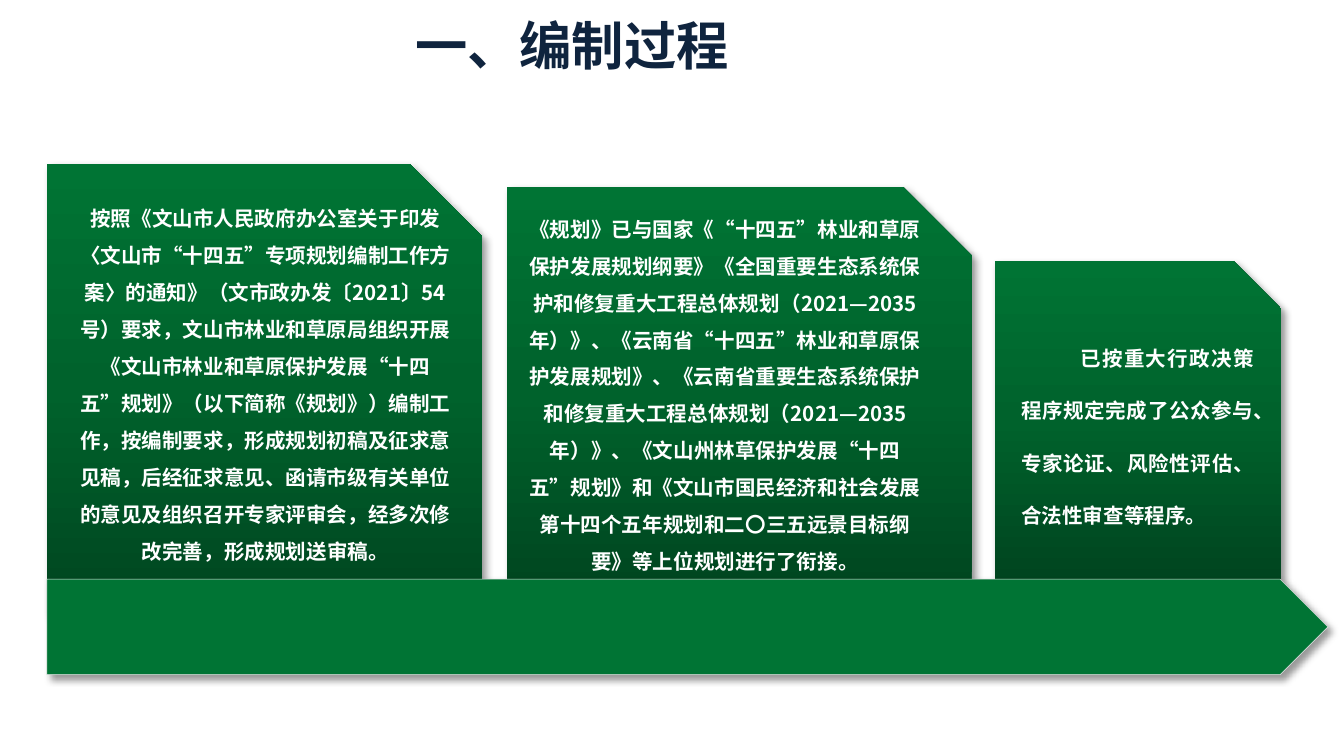
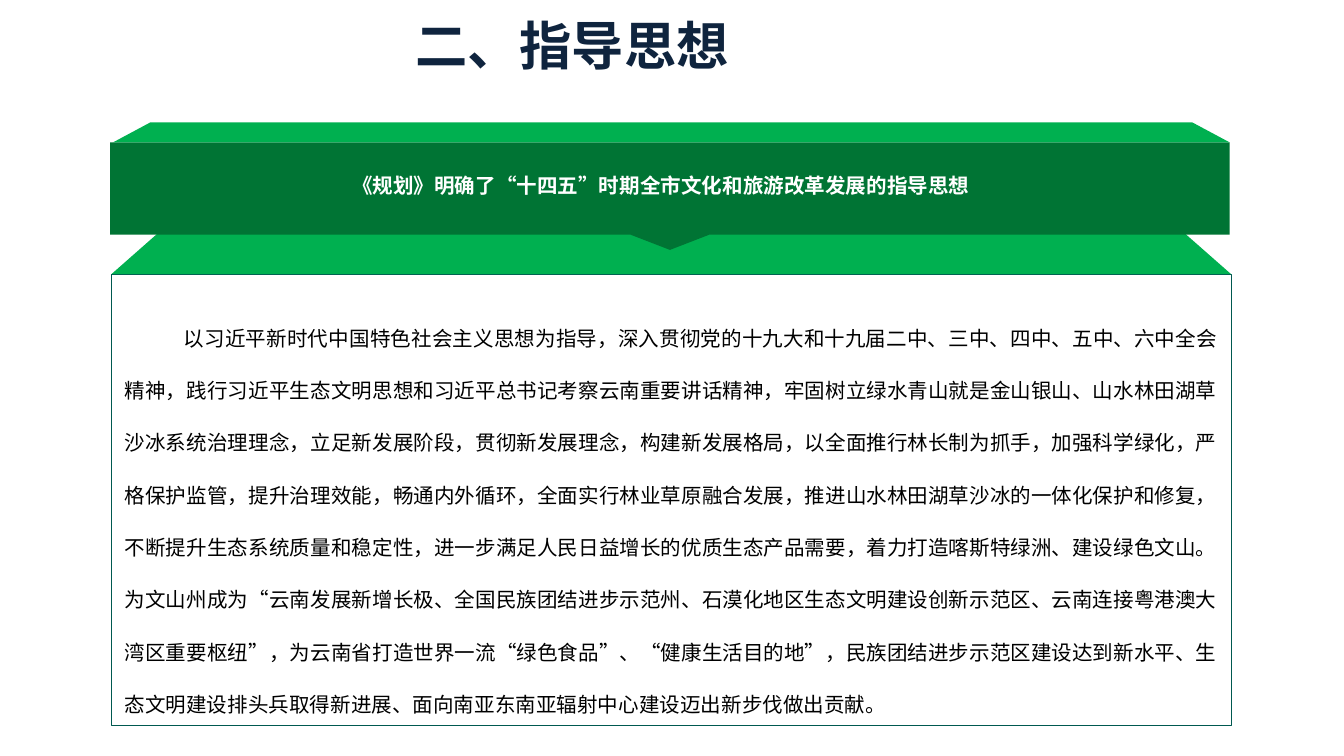
from copy import deepcopy

from lxml import etree
from pptx import Presentation
from pptx.dml.color import RGBColor
from pptx.enum.shapes import MSO_SHAPE
from pptx.enum.text import MSO_ANCHOR, MSO_AUTO_SIZE, PP_ALIGN
from pptx.oxml.ns import qn
from pptx.util import Inches, Pt

SNIP = MSO_SHAPE.SNIP_1_RECTANGLE
ARROW = MSO_SHAPE.PENTAGON
BANNER = MSO_SHAPE.DOWN_ARROW_CALLOUT
RECT = MSO_SHAPE.RECTANGLE
TOP, MIDDLE = MSO_ANCHOR.TOP, MSO_ANCHOR.MIDDLE
LEFT, CENTER, JUSTIFY = PP_ALIGN.LEFT, PP_ALIGN.CENTER, PP_ALIGN.JUSTIFY
GROW, FIXED = MSO_AUTO_SIZE.SHAPE_TO_FIT_TEXT, MSO_AUTO_SIZE.NONE

WIDTH = Inches(10)
HEIGHT = WIDTH * 9 // 16

SANS = "Noto Sans CJK SC"
SERIF = "Times New Roman"

WHITE = RGBColor(0xFF, 0xFF, 0xFF)
BLACK = RGBColor(0, 0, 0)
NAVY = RGBColor(0x0F, 0x24, 0x3E)
GREEN = RGBColor(0x00, 0x74, 0x34)
BRIGHT = RGBColor(0x00, 0xB0, 0x50)
TEAL = RGBColor(0x00, 0x59, 0x50)
PALE = RGBColor(0xEA, 0xEA, 0xEA)
FADE = [(0, RGBColor(0x00, 0x45, 0x1F)),
        (0.5, RGBColor(0x00, 0x62, 0x2C)),
        (1, GREEN)]

# Card left, top, width, height; text left, top, width, height; style; words
CARDS = [
    ((0.35, 1.22, 3.24, 3.34), (0.47, 1.39, 3.01, 2.85),
     dict(align=CENTER, space=1.5),
     "按照《文山市人民政府办公室关于印发〈文山市“十四五”专项规划编制工作方案〉的通知》"
     "（文市政办发〔2021〕54号）要求，文山市林业和草原局组织开展《文山市林业和草原保护发展"
     "“十四五”规划》（以下简称《规划》）编制工作，按编制要求，形成规划初稿及征求意见稿，"
     "后经征求意见、函请市级有关单位的意见及组织召开专家评审会，经多次修改完善，形成规划送审稿。"),
    ((3.77, 1.39, 3.46, 3.07), (3.82, 1.47, 3.15, 2.92),
     dict(align=CENTER, space=1.5),
     "《规划》已与国家《“十四五”林业和草原保护发展规划纲要》《全国重要生态系统保护和修复"
     "重大工程总体规划（2021—2035年）》、《云南省“十四五”林业和草原保护发展规划》、"
     "《云南省重要生态系统保护和修复重大工程总体规划（2021—2035年）》、《文山州林草保护发展"
     "“十四五”规划》和《文山市国民经济和社会发展第十四个五年规划和二〇三五远景目标纲要》"
     "等上位规划进行了衔接。"),
    ((7.4, 1.94, 2.13, 2.37), (7.5, 2.32, 1.93, 1.61),
     dict(align=JUSTIFY, space=Pt(28), indent=0.44),
     "已按重大行政决策程序规定完成了公众参与、专家论证、风险性评估、合法性审查等程序。"),
]

GUIDE = (
    "以习近平新时代中国特色社会主义思想为指导，深入贯彻党的十九大和十九届二中、三中、四中、"
    "五中、六中全会精神，践行习近平生态文明思想和习近平总书记考察云南重要讲话精神，牢固树立"
    "绿水青山就是金山银山、山水林田湖草沙冰系统治理理念，立足新发展阶段，贯彻新发展理念，"
    "构建新发展格局，以全面推行林长制为抓手，加强科学绿化，严格保护监管，提升治理效能，"
    "畅通内外循环，全面实行林业草原融合发展，推进山水林田湖草沙冰的一体化保护和修复，"
    "不断提升生态系统质量和稳定性，进一步满足人民日益增长的优质生态产品需要，着力打造"
    "喀斯特绿洲、建设绿色文山。为文山州成为“云南发展新增长极、全国民族团结进步示范州、"
    "石漠化地区生态文明建设创新示范区、云南连接粤港澳大湾区重要枢纽”，为云南省打造世界一流"
    "“绿色食品”、“健康生活目的地”，民族团结进步示范区建设达到新水平、生态文明建设排头兵"
    "取得新进展、面向南亚东南亚辐射中心建设迈出新步伐做出贡献。")


def inches(box):
    return [Inches(n) for n in box]


def write(frame, words, size=11, color=WHITE, font=SANS, bold=True,
          align=CENTER, space=None, indent=0):
    """Put one formatted paragraph in a text frame."""
    para = frame.paragraphs[0]
    para.alignment = align
    para.space_before = Pt(0)
    if space:
        para.line_spacing = space
    if indent:
        props = para._p.get_or_add_pPr()
        props.set("marL", "0")
        props.set("indent", str(Inches(indent)))
    run = para.add_run()
    run.text = words
    run.font.name = font
    run.font.size = Pt(size)
    run.font.bold = bold
    run.font.color.rgb = color
    east = etree.SubElement(run._r.get_or_add_rPr(), qn("a:ea"))
    east.set("typeface", SANS)


def add_text(slide, box, words, anchor=TOP, wrap=True, fit=GROW, **style):
    frame = slide.shapes.add_textbox(*inches(box)).text_frame
    frame.word_wrap = wrap
    frame.auto_size = fit
    frame.vertical_anchor = anchor
    write(frame, words, **style)


def paint(shape, fill=None, line=None):
    shape.shadow.inherit = False
    if fill is None:
        shape.fill.background()
    else:
        shape.fill.solid()
        shape.fill.fore_color.rgb = fill
    if line is None:
        shape.line.fill.background()
    else:
        shape.line.color.rgb = line
        shape.line.width = Pt(0.25)


def add_shape(slide, kind, box, fill=None, line=None):
    shape = slide.shapes.add_shape(kind, *inches(box))
    paint(shape, fill, line)
    return shape


def fade(shape):
    """Fill a shape with the green gradient, dark at the bottom."""
    fill = shape.fill
    fill.gradient()
    fill.gradient_angle = 90
    stops = shape._element.spPr.find(".//" + qn("a:gsLst"))
    stops.append(deepcopy(stops[0]))
    for stop, (place, color) in zip(fill.gradient_stops, FADE):
        stop.position = place
        stop.color.rgb = color


def cast(shape):
    """Give a shape a soft shadow to the lower right."""
    effects = shape._element.spPr.find(qn("a:effectLst"))
    outer = etree.SubElement(effects, qn("a:outerShdw"), blurRad=str(Pt(4)),
                             dist=str(Pt(3)), dir="2700000", algn="tl",
                             rotWithShape="0")
    color = etree.SubElement(outer, qn("a:srgbClr"), val="000000")
    etree.SubElement(color, qn("a:alpha"), val="40000")


def add_flap(slide, left, top, width, height, inset):
    """Draw a bright trapezoid, narrower at the top."""
    right, foot = left + width, top + height
    build = slide.shapes.build_freeform(Inches(left), Inches(foot))
    build.add_line_segments([inches(point) for point in (
        (left + inset, top), (right - inset, top), (right, foot))])
    paint(build.convert_to_shape(), BRIGHT)


def add_slide(deck, title):
    slide = deck.slides.add_slide(deck.slide_layouts[5])
    head = slide.shapes.title
    head.left, head.top, head.width, head.height = inches(
        (2.99, 0.05, 3.63, 0.57))
    frame = head.text_frame
    frame.auto_size = FIXED
    frame.vertical_anchor = MIDDLE
    write(frame, title, size=28, color=NAVY, align=LEFT)
    return slide


def add_process(deck):
    slide = add_slide(deck, "一、编制过程")
    for box, area, style, words in CARDS:
        card = add_shape(slide, SNIP, box)
        fade(card)
        cast(card)
        add_text(slide, area, words, **style)
    cast(add_shape(slide, ARROW, (0.35, 4.31, 9.53, 0.71), GREEN, PALE))


def add_guide(deck):
    slide = add_slide(deck, "二、指导思想")
    add_shape(slide, RECT, (0.83, 2.04, 8.33, 3.36), line=TEAL)
    add_flap(slide, 0.83, 1.67, 8.33, 0.37, 0.42)
    add_text(slide, (0.83, 2.15, 8.33, 3.25), GUIDE, anchor=MIDDLE, fit=FIXED,
             color=BLACK, font=SERIF, bold=False, align=JUSTIFY,
             space=Pt(28), indent=0.44)
    banner = add_shape(slide, BANNER, (0.82, 1.06, 8.33, 0.8), GREEN)
    for i, value in enumerate((0.727, 0.363, 0.14, 0.859)):
        banner.adjustments[i] = value
    add_flap(slide, 0.84, 0.91, 8.31, 0.15, 0.28)
    add_text(slide, (1.14, 1.24, 7.56, 0.24),
             "《规划》明确了“十四五”时期全市文化和旅游改革发展的指导思想",
             wrap=False, fit=FIXED)


def main():
    deck = Presentation()
    deck.slide_width, deck.slide_height = WIDTH, HEIGHT
    add_process(deck)
    add_guide(deck)
    deck.save("out.pptx")


if __name__ == "__main__":
    main()
